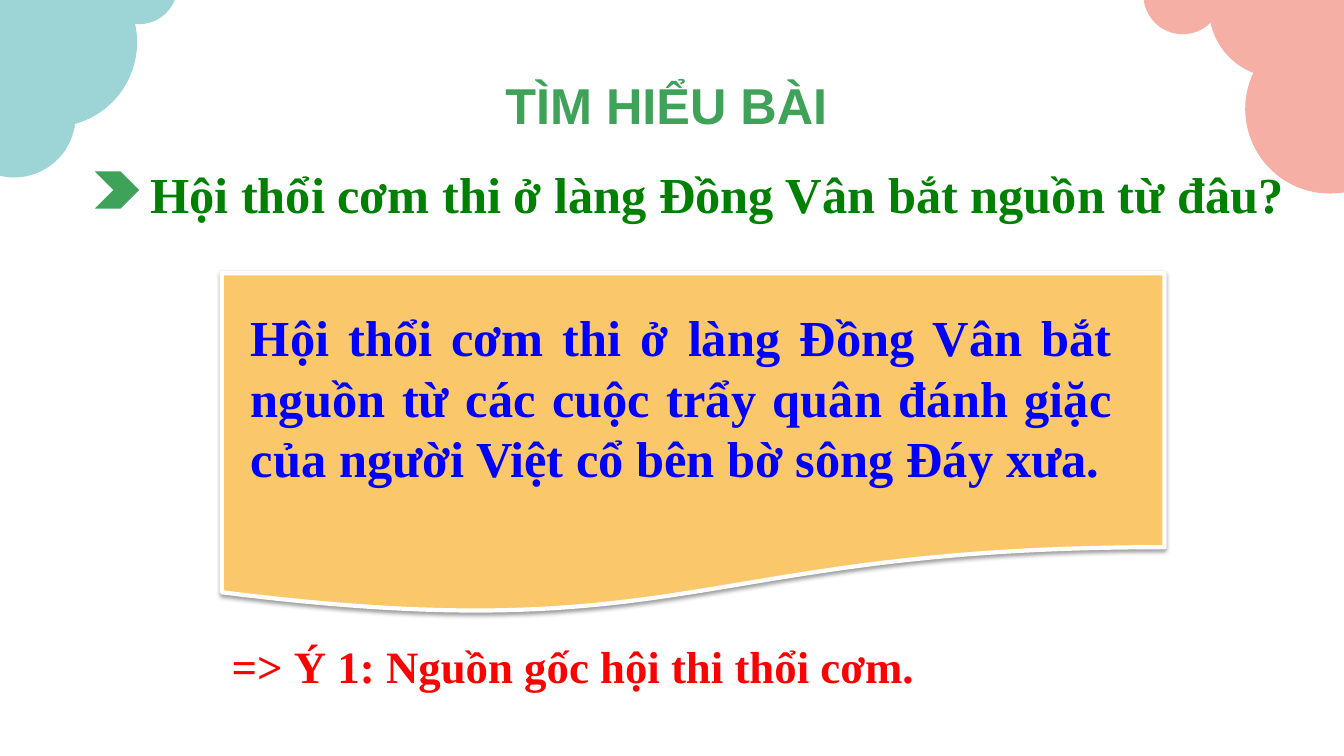
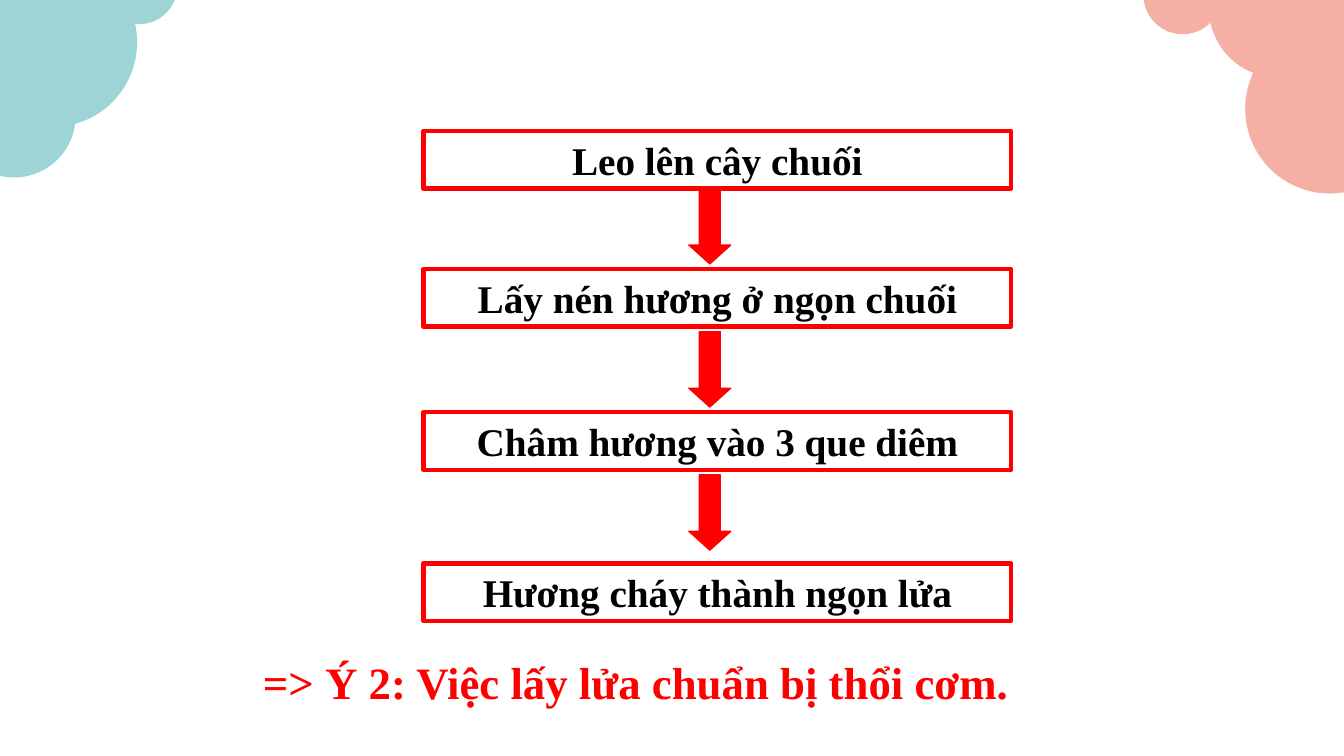
from dataclasses import dataclass

from lxml.etree import SubElement
from pptx import Presentation
from pptx.dml.color import RGBColor
from pptx.enum.shapes import MSO_SHAPE
from pptx.enum.text import MSO_ANCHOR, MSO_AUTO_SIZE, PP_ALIGN
from pptx.oxml.ns import qn
from pptx.presentation import Presentation as Deck
from pptx.shapes.autoshape import Shape
from pptx.slide import Slide
from pptx.util import Inches, Pt


@dataclass(frozen=True)
class Theme:
    teal: str = "9DD4D6"
    pink: str = "F5AFA5"
    leaf: str = "3EA258"
    question: str = "008000"
    answer: str = "0000FF"
    accent: str = "FF0000"
    paper: str = "FAC86A"
    white: str = "FFFFFF"
    black: str = "000000"
    title_font: str = "Arial"
    body_font: str = "Times New Roman"
    large: int = 36
    conclusion: int = 32
    step: int = 28


@dataclass(frozen=True)
class Box:
    left: float
    top: float
    width: float
    height: float

    def lengths(self) -> tuple[int, ...]:
        return tuple(Inches(v) for v in (self.left, self.top, self.width, self.height))


@dataclass(frozen=True)
class Puff:
    left: float
    top: float
    size: float
    color: str


@dataclass(frozen=True)
class Step:
    top: float
    label: str


THEME = Theme()
CLOUDS = (
    Puff(-0.32, -0.42, 1.68, THEME.teal),
    Puff(-0.47, 0.54, 1.22, THEME.teal),
    Puff(1, -0.52, 0.76, THEME.teal),
    Puff(11.99, -0.61, 1.38, THEME.pink),
    Puff(12.35, 0.24, 1.68, THEME.pink),
    Puff(11.34, -0.44, 0.78, THEME.pink),
)
STEPS = (
    Step(1.3, "Leo lên cây chuối"),
    Step(2.67, "Lấy nén hương ở ngọn chuối"),
    Step(4.09, "Châm hương vào 3 que diêm"),
    Step(5.59, "Hương cháy thành ngọn lửa"),
)
ARROW_TOP, ARROW_PITCH = 1.87, 1.42
TITLE_ONLY, BLANK = 5, 6


def add_block(slide: Slide, preset: MSO_SHAPE, box: Box, fill: str,
              line: str | None = None, line_width: float = 3) -> Shape:
    block = slide.shapes.add_shape(preset, *box.lengths())
    block.shadow.inherit = False
    block.fill.solid()
    block.fill.fore_color.rgb = RGBColor.from_string(fill)
    if line:
        block.line.color.rgb = RGBColor.from_string(line)
        block.line.width = Pt(line_width)
    else:
        block.line.fill.background()
    return block


def write(shape: Shape, text: str, size: int, color: str, align: PP_ALIGN = PP_ALIGN.LEFT,
          font: str = THEME.body_font, anchor: MSO_ANCHOR = MSO_ANCHOR.TOP,
          wrap: bool = True) -> None:
    frame = shape.text_frame
    frame.word_wrap = wrap
    frame.auto_size = MSO_AUTO_SIZE.SHAPE_TO_FIT_TEXT
    frame.vertical_anchor = anchor
    paragraph = frame.paragraphs[0]
    paragraph.text = text
    paragraph.alignment = align
    paragraph.font.name = font
    paragraph.font.size = Pt(size)
    paragraph.font.bold = True
    paragraph.font.color.rgb = RGBColor.from_string(color)


def add_text(slide: Slide, box: Box, text: str, size: int, color: str,
             align: PP_ALIGN = PP_ALIGN.LEFT) -> None:
    write(slide.shapes.add_textbox(*box.lengths()), text, size, color, align)


def add_conclusion(slide: Slide, left: float, top: float, text: str) -> None:
    add_text(slide, Box(left, top, 7.94, 0.64), text, THEME.conclusion, THEME.accent)


def set_title(slide: Slide, box: Box, text: str) -> None:
    title = slide.shapes.title
    title.left, title.top, title.width, title.height = box.lengths()
    frame = title.text_frame
    frame.margin_left = frame.margin_right = Inches(0.07)
    frame.margin_top = frame.margin_bottom = Inches(0.04)
    write(title, text, THEME.large, THEME.leaf, PP_ALIGN.CENTER,
          THEME.title_font, MSO_ANCHOR.MIDDLE, wrap=False)


def add_drop_shadow(shape: Shape) -> None:
    effects = shape.element.spPr.find(qn("a:effectLst"))
    shadow = SubElement(effects, qn("a:outerShdw"), blurRad=str(Pt(3.1)),
                        dist=str(Pt(1.6)), dir="5400000", algn="t", rotWithShape="0")
    color = SubElement(shadow, qn("a:srgbClr"), val=THEME.black)
    SubElement(color, qn("a:alpha"), val="38000")


def add_clouded_slide(deck: Deck, layout: int) -> Slide:
    slide = deck.slides.add_slide(deck.slide_layouts[layout])
    for puff in CLOUDS:
        add_block(slide, MSO_SHAPE.OVAL, Box(puff.left, puff.top, puff.size, puff.size),
                  puff.color)
    return slide


def build_origin(deck: Deck) -> None:
    slide = add_clouded_slide(deck, TITLE_ONLY)
    set_title(slide, Box(4.92, 0.69, 3.38, 0.68), "TÌM HIỂU BÀI")

    # Question with its marker
    add_text(slide, Box(1.39, 1.57, 11.58, 0.71),
             "Hội thổi cơm thi ở làng Đồng Vân bắt nguồn từ đâu?",
             THEME.large, THEME.question)
    add_block(slide, MSO_SHAPE.CHEVRON, Box(0.94, 1.7, 0.44, 0.37), THEME.leaf)

    # Answer on a paper sheet
    sheet = add_block(slide, MSO_SHAPE.FLOWCHART_DOCUMENT, Box(2.2, 2.71, 9.35, 3.39),
                      THEME.paper, THEME.white)
    add_drop_shadow(sheet)
    add_text(slide, Box(2.39, 2.99, 8.74, 2.49),
             "Hội thổi cơm thi ở làng Đồng Vân bắt nguồn từ các cuộc trẩy quân "
             "đánh giặc của người Việt cổ bên bờ sông Đáy xưa.",
             THEME.large, THEME.answer, PP_ALIGN.JUSTIFY)

    add_conclusion(slide, 2.2, 6.29, "=> Ý 1: Nguồn gốc hội thi thổi cơm.")


def build_fire_steps(deck: Deck) -> None:
    slide = add_clouded_slide(deck, BLANK)

    # Steps
    for step in STEPS:
        panel = add_block(slide, MSO_SHAPE.RECTANGLE, Box(4.2, step.top, 5.83, 0.57),
                          THEME.white, THEME.accent)
        write(panel, step.label, THEME.step, THEME.black, PP_ALIGN.CENTER)

    # Arrows between the steps
    for index in range(len(STEPS) - 1):
        arrow = add_block(slide, MSO_SHAPE.DOWN_ARROW,
                          Box(6.83, ARROW_TOP + index * ARROW_PITCH, 0.42, 0.75),
                          THEME.accent, THEME.accent, 0.75)
        arrow.adjustments[0] = 0.5
        arrow.adjustments[1] = 0.45

    add_conclusion(slide, 2.51, 6.45, "=> Ý 2: Việc lấy lửa chuẩn bị thổi cơm.")


def main() -> None:
    deck = Presentation()
    deck.slide_width = Inches(13.33)
    deck.slide_height = Inches(7.5)
    build_origin(deck)
    build_fire_steps(deck)
    deck.save("out.pptx")


if __name__ == "__main__":
    main()
